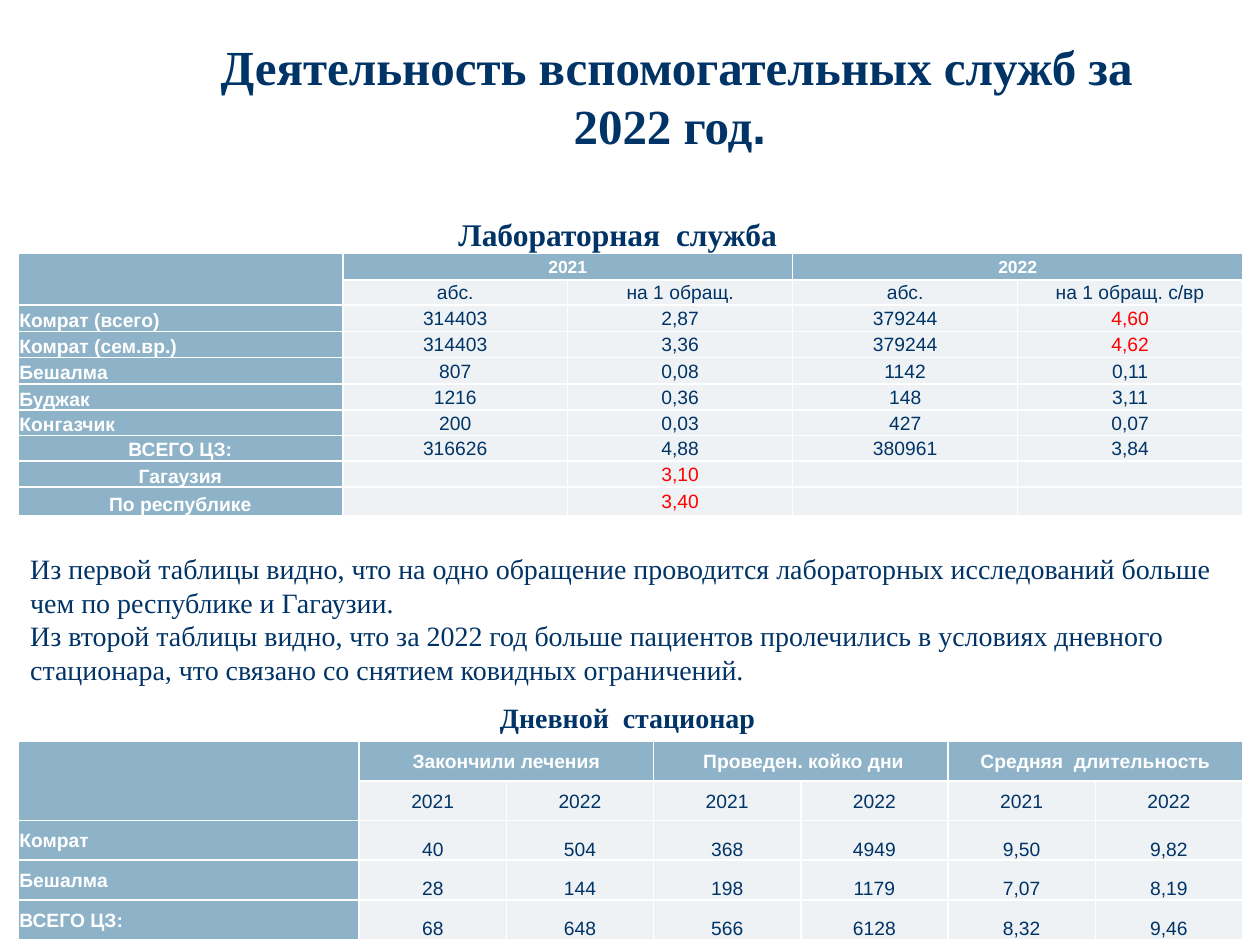
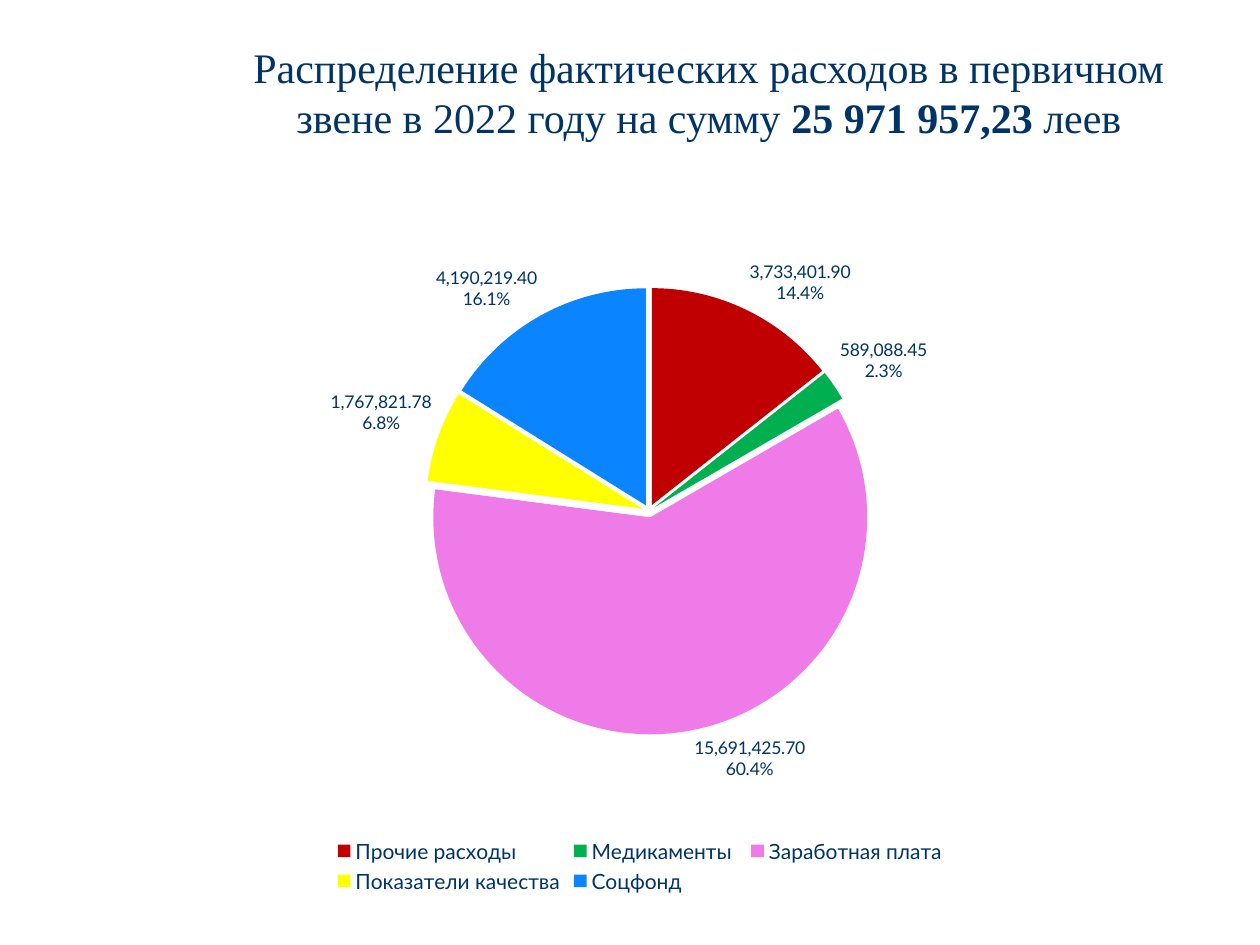
"""Builds two slides: auxiliary services tables and the spending pie chart."""
from dataclasses import dataclass
from itertools import chain

from lxml import etree
from pptx import Presentation
from pptx.chart.data import CategoryChartData
from pptx.dml.color import RGBColor
from pptx.enum.chart import XL_CHART_TYPE, XL_LABEL_POSITION, XL_LEGEND_POSITION
from pptx.enum.text import MSO_ANCHOR, MSO_AUTO_SIZE, PP_ALIGN
from pptx.oxml.ns import qn
from pptx.util import Cm, Pt

LEFT, CENTER = PP_ALIGN.LEFT, PP_ALIGN.CENTER
TOP, MIDDLE, BOTTOM = MSO_ANCHOR.TOP, MSO_ANCHOR.MIDDLE, MSO_ANCHOR.BOTTOM
PIE = XL_CHART_TYPE.PIE
OUTSIDE_END = XL_LABEL_POSITION.OUTSIDE_END
LEGEND_BOTTOM = XL_LEGEND_POSITION.BOTTOM

COLORS = {
    "navy": "003366",
    "white": "FFFFFF",
    "red": "FF0000",
    "header": "8EB3C8",
    "body": "EEF2F5",
}
SERIF, SANS, CHART_FONT = "Times New Roman", "Arial", "Lato"
TABLE_LEFT, TABLE_WIDTH = 0.36, 24.69
TITLE_ONLY = 5


@dataclass
class Box:
    """Place of an object, in centimetres."""
    left: float
    top: float
    width: float
    height: float

    def emu(self):
        return [Cm(v) for v in (self.left, self.top, self.width, self.height)]


@dataclass
class Run:
    """A piece of text that may differ from its paragraph."""
    text: str
    bold: bool | None = None
    font: str | None = None


@dataclass
class TextStyle:
    """Font size, weight, alignment, anchor and wrapping of a text."""
    size: float
    bold: bool = False
    align: PP_ALIGN = LEFT
    anchor: MSO_ANCHOR = TOP
    wrap: bool = True


@dataclass
class TableSpec:
    """A table with paired header columns and a label column."""
    top: float
    label_width: float
    row_heights: list[float]
    groups: list[str]
    subheads: list[str]
    rows: list[list[str]]
    group_size: float
    label_anchor: MSO_ANCHOR
    value_anchor: MSO_ANCHOR
    centered: tuple[str, ...] = ()
    red: tuple[str, ...] = ()


@dataclass
class Slice:
    """One slice of the pie."""
    name: str
    value: float
    color: str


LAB = TableSpec(
    top=5.11, label_width=6.55,
    row_heights=[0.53, 0.51, 0.53, 0.53, 0.53, 0.53, 0.51, 0.51, 0.53, 0.58],
    groups=["2021", "2022"],
    subheads=["абс.", "на 1 обращ.", "абс.", "на 1 обращ. с/вр"],
    rows=[
        ["Комрат (всего)", "314403", "2,87", "379244", "4,60"],
        ["Комрат (сем.вр.)", "314403", "3,36", "379244", "4,62"],
        ["Бешалма", "807", "0,08", "1142", "0,11"],
        ["Буджак", "1216", "0,36", "148", "3,11"],
        ["Конгазчик", "200", "0,03", "427", "0,07"],
        ["ВСЕГО ЦЗ:", "316626", "4,88", "380961", "3,84"],
        ["Гагаузия", "", "3,10", "", ""],
        ["По республике", "", "3,40", "", ""],
    ],
    group_size=10, label_anchor=BOTTOM, value_anchor=MIDDLE,
    centered=("ВСЕГО ЦЗ:", "Гагаузия", "По республике"),
    red=("4,60", "4,62", "3,10", "3,40"),
)
DAY_CARE = TableSpec(
    top=14.94, label_width=6.88, row_heights=[0.8] * 5,
    groups=["Закончили лечения", " Проведен. койко дни", "Средняя  длительность"],
    subheads=["2021", "2022"] * 3,
    rows=[
        ["Комрат", "40", "504", "368", "4949", "9,50", "9,82"],
        ["Бешалма", "28", "144", "198", "1179", "7,07", "8,19"],
        ["ВСЕГО ЦЗ:", "68", "648", "566", "6128", "8,32", "9,46"],
    ],
    group_size=11, label_anchor=MIDDLE, value_anchor=BOTTOM,
)
CONCLUSIONS = [
    [Run("Из первой таблицы видно, что на одно обращение проводится лабораторных "
         "исследований больше чем по республике и Гагаузии.")],
    [Run("Из второй таблицы видно, что за 2022 год больше пациентов пролечились в "
         "условиях дневного стационара, что связано со снятием ковидных ограничений.")],
]
SLICES = [
    Slice("Прочие расходы", 3733401.90, "C00000"),
    Slice("Медикаменты ", 589088.45, "00B050"),
    Slice("Заработная плата", 15691425.70, "EF7BE9"),
    Slice("Показатели качества", 1767821.78, "FFFF00"),
    Slice("Соцфонд", 4190219.40, "0A85FF"),
]
PLOT_LAYOUT = {"x": 0.093, "y": 0.094, "w": 0.83, "h": 0.663}


def set_font(font, name: str, size: float, color: str, bold: bool = False) -> None:
    """Apply a typeface, size, named colour and weight."""
    font.name, font.size, font.bold = name, Pt(size), bold
    font.color.rgb = RGBColor.from_string(COLORS[color])


def fill_text(tf, paragraphs: list[list[Run]], style: TextStyle) -> None:
    """Write paragraphs of runs into a text frame."""
    tf.word_wrap, tf.vertical_anchor = style.wrap, style.anchor
    for i, runs in enumerate(paragraphs):
        p = tf.add_paragraph() if i else tf.paragraphs[0]
        p.alignment = style.align
        set_font(p.font, SERIF, style.size, "navy", style.bold)
        for run in runs:
            r = p.add_run()
            r.text = run.text
            if run.bold is not None:
                r.font.bold = run.bold
            if run.font:
                r.font.name = run.font


def add_text(s, box: Box, paragraphs: list[list[Run]], style: TextStyle) -> None:
    """Add a text box."""
    fill_text(s.shapes.add_textbox(*box.emu()).text_frame, paragraphs, style)


def add_titled_slide(prs, box: Box, runs: list[Run], style: TextStyle):
    """Add a title-only slide and place its title."""
    s = prs.slides.add_slide(prs.slide_layouts[TITLE_ONLY])
    title = s.shapes.title
    title.left, title.top, title.width, title.height = box.emu()
    title.text_frame.auto_size = MSO_AUTO_SIZE.NONE
    fill_text(title.text_frame, [runs], style)
    return s


def fill_cell(cell, text: str, fill: str, color: str, size: float = 11,
              align: PP_ALIGN = CENTER, anchor: MSO_ANCHOR = MIDDLE) -> None:
    """Fill and write one table cell; header cells are bold."""
    cell.fill.solid()
    cell.fill.fore_color.rgb = RGBColor.from_string(COLORS[fill])
    cell.margin_left = cell.margin_right = cell.margin_top = Cm(0.03)
    cell.margin_bottom = 0
    cell.vertical_anchor = anchor
    p = cell.text_frame.paragraphs[0]
    p.alignment = align
    set_font(p.font, SANS, size, color, fill == "header")
    if text:
        p.add_run().text = text
    else:
        etree.SubElement(p._p, qn("a:endParaRPr")).set("sz", str(size * 100))


def add_service_table(s, spec: TableSpec) -> None:
    """Add a table with merged group headers."""
    n = len(spec.subheads)
    box = Box(TABLE_LEFT, spec.top, TABLE_WIDTH, sum(spec.row_heights))
    table = s.shapes.add_table(len(spec.row_heights), n + 1, *box.emu()).table
    table.horz_banding = False
    for row, height in zip(table.rows, spec.row_heights):
        row.height = Cm(height)
    for i, column in enumerate(table.columns):
        column.width = Cm((TABLE_WIDTH - spec.label_width) / n if i else spec.label_width)

    group_row = ["", *chain.from_iterable((group, "") for group in spec.groups)]
    for c, text in enumerate(group_row):
        fill_cell(table.cell(0, c), text, "header", "white", spec.group_size)
    fill_cell(table.cell(1, 0), "", "header", "white")
    for c, text in enumerate(spec.subheads, 1):
        fill_cell(table.cell(1, c), text, "body", "navy")
    for r, (label, *values) in enumerate(spec.rows, 2):
        align = CENTER if label in spec.centered else LEFT
        fill_cell(table.cell(r, 0), label, "header", "white",
                  align=align, anchor=spec.label_anchor)
        for c, value in enumerate(values, 1):
            color = "red" if value in spec.red else "navy"
            fill_cell(table.cell(r, c), value, "body", color, anchor=spec.value_anchor)

    table.cell(0, 0).merge(table.cell(1, 0))
    for c in range(1, n, 2):
        table.cell(0, c).merge(table.cell(0, c + 1))


def set_plot_layout(chart) -> None:
    """Fix the inner plot area of a chart."""
    area = chart.plots[0]._element.getparent()
    for old in area.findall(qn("c:layout")):
        area.remove(old)
    layout = etree.Element(qn("c:layout"))
    manual = etree.SubElement(layout, qn("c:manualLayout"))
    settings = {"layoutTarget": "inner", "xMode": "edge", "yMode": "edge", **PLOT_LAYOUT}
    for tag, value in settings.items():
        etree.SubElement(manual, qn(f"c:{tag}")).set("val", str(value))
    area.insert(0, layout)


def add_spending_pie(s, box: Box) -> None:
    """Add the exploded pie with value and percent labels."""
    data = CategoryChartData(number_format="#,##0.00")
    data.categories = [part.name for part in SLICES]
    data.add_series("Series 1", [part.value for part in SLICES])
    chart = s.shapes.add_chart(PIE, *box.emu(), data).chart
    chart.has_title = False
    set_font(chart.font, CHART_FONT, 10, "navy")
    chart.has_legend = True
    chart.legend.position = LEGEND_BOTTOM
    chart.legend.include_in_layout = False
    set_font(chart.legend.font, CHART_FONT, 12, "navy")
    chart.plots[0].vary_by_categories = True

    series = chart.plots[0].series[0]
    for i, part in enumerate(SLICES):
        fill = series.points[i].format.fill
        fill.solid()
        fill.fore_color.rgb = RGBColor.from_string(part.color)
    explosion = etree.Element(qn("c:explosion"))
    explosion.set("val", "3")
    series._element.find(qn("c:dPt")).addprevious(explosion)

    labels = series.data_labels
    labels.show_value = labels.show_percentage = True
    labels.number_format, labels.number_format_is_linked = "0.0%", False
    labels.position = OUTSIDE_END
    set_font(labels.font, CHART_FONT, 10, "navy")
    separator = etree.Element(qn("c:separator"))
    separator.text = "\n"
    labels._element.find(qn("c:showBubbleSize")).addnext(separator)
    set_plot_layout(chart)


def build_services_slide(prs) -> None:
    """Build the laboratory and day care slide."""
    s = add_titled_slide(
        prs, Box(3.38, 0.43, 20.52, 2.97),
        [Run("Деятельность вспомогательных служб за 2022 год"), Run(". ", font=SANS)],
        TextStyle(28, bold=True, align=CENTER, anchor=MIDDLE))
    add_text(s, Box(8.99, 4.22, 7.39, 1.02), [[Run("Лабораторная  служба")]],
             TextStyle(18, bold=True))
    add_text(s, Box(9.83, 14, 5.72, 0.94), [[Run("Дневной  стационар")]],
             TextStyle(16, bold=True, wrap=False))
    add_service_table(s, LAB)
    add_service_table(s, DAY_CARE)
    add_text(s, Box(TABLE_LEFT, 11, TABLE_WIDTH, 3), CONCLUSIONS, TextStyle(16))


def build_spending_slide(prs) -> None:
    """Build the spending distribution slide."""
    s = add_titled_slide(
        prs, Box(4.09, 0.71, 20.4, 2.31),
        [Run("Распределение фактических расходов в первичном звене в 2022 году на сумму "),
         Run("25 971 957,23 ", bold=True), Run("леев")],
        TextStyle(24, align=CENTER))
    add_spending_pie(s, Box(1.42, 4.52, 22.96, 13.59))


def main() -> None:
    """Build and save the presentation."""
    prs = Presentation()
    prs.slide_width, prs.slide_height = Cm(25.4), Cm(19.05)
    build_services_slide(prs)
    build_spending_slide(prs)
    prs.save("out.pptx")


if __name__ == "__main__":
    main()
